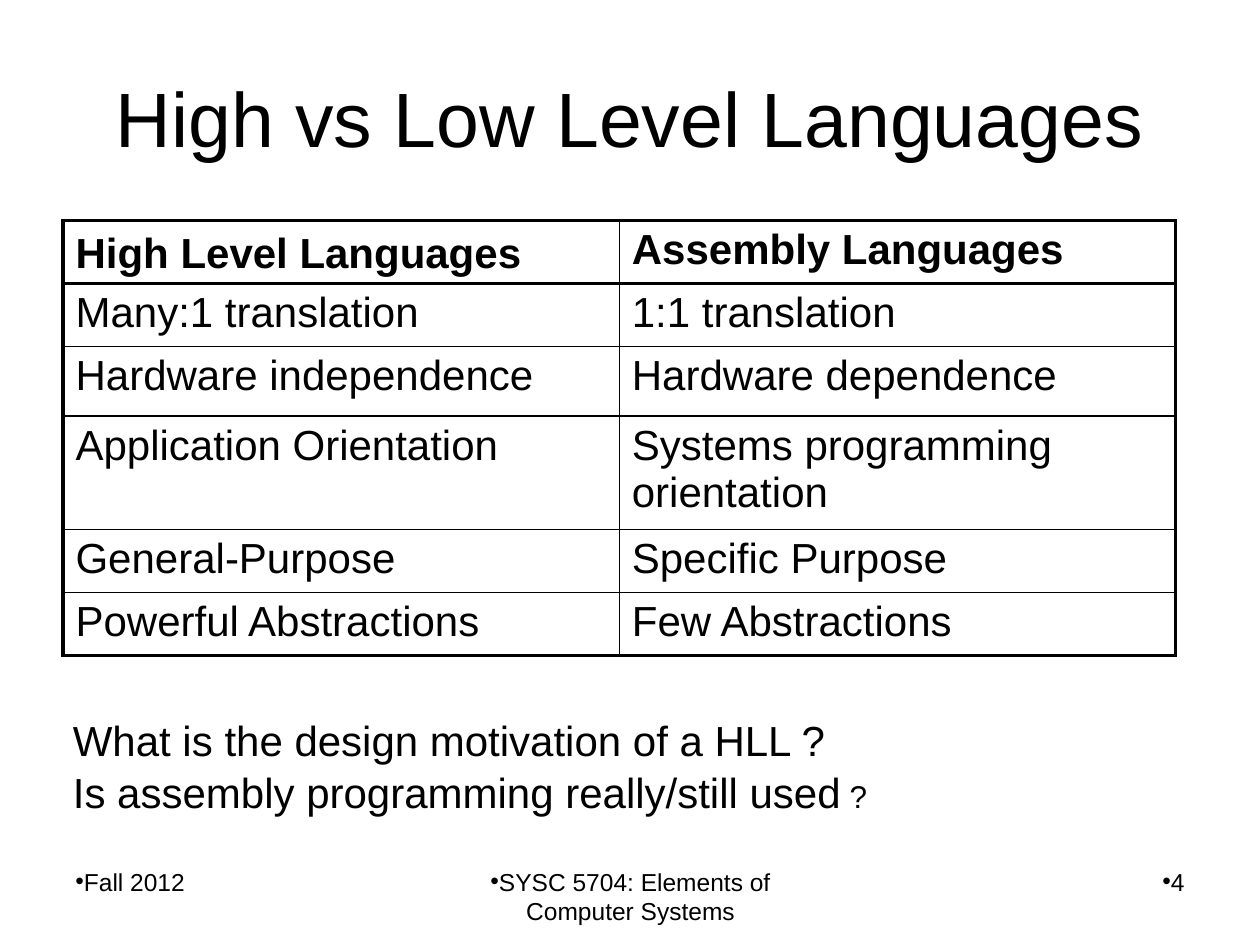
from dataclasses import dataclass

from lxml.etree import SubElement
from pptx import Presentation
from pptx.dml.color import RGBColor
from pptx.enum.shapes import MSO_CONNECTOR
from pptx.enum.text import MSO_ANCHOR, PP_ALIGN
from pptx.oxml.ns import qn
from pptx.util import Inches, Pt


@dataclass(frozen=True)
class Theme:
    font: str = "Arial"
    ink: str = "000000"
    title: int = 44
    body: int = 24
    small: int = 18
    foot: int = 14
    thick: float = 2.25
    thin: float = 1


THEME = Theme()
INK = RGBColor.from_string(THEME.ink)
ROWS = [
    ("High Level Languages", "Assembly Languages"),
    ("Many:1 translation", "1:1 translation"),
    ("Hardware independence", "Hardware dependence"),
    ("Application Orientation", "Systems programming orientation"),
    ("General-Purpose", "Specific Purpose"),
    ("Powerful Abstractions", "Few Abstractions"),
]
HEIGHTS = [0.46, 0.46, 0.55, 0.68, 0.46, 0.46]
FOOTERS = [
    (0.5, 2.33, "Fall 2012", PP_ALIGN.LEFT),
    (3.42, 3.17, "SYSC 5704: Elements of Computer Systems", PP_ALIGN.CENTER),
    (7.17, 2.33, "4", PP_ALIGN.RIGHT),
]
ASKS = [
    [("What is the design motivation of a HLL ?", THEME.body)],
    [("Is assembly programming really/still used", THEME.body),
     (" ?", THEME.small)],
]


def add_run(para, text, size, bold=False):
    run = para.add_run()
    run.text = text
    font = run.font
    font.name, font.size, font.bold = THEME.font, Pt(size), bold
    font.color.rgb = INK


def add_title(slide, text):
    title = slide.shapes.title
    title.left, title.top = Inches(0.5), Inches(0.3)
    title.width, title.height = Inches(9), Inches(1.25)
    frame = title.text_frame
    frame.vertical_anchor = MSO_ANCHOR.MIDDLE
    para = frame.paragraphs[0]
    para.alignment = PP_ALIGN.CENTER
    add_run(para, text, THEME.title)


def add_edge(cell, side, width):
    props = cell._tc.get_or_add_tcPr()
    line = SubElement(props, qn(f"a:ln{side}"), w=str(Pt(width)))
    fill = SubElement(line, qn("a:solidFill"))
    SubElement(fill, qn("a:srgbClr"), val=THEME.ink)


def add_grid(slide):
    """Table with a thick outer frame and thin inner rules."""
    last, end = len(ROWS) - 1, len(ROWS[0]) - 1
    table = slide.shapes.add_table(
        len(ROWS), len(ROWS[0]), Inches(0.5), Inches(1.75),
        Inches(8.83), Inches(sum(HEIGHTS))).table
    table.first_row = table.horz_banding = False
    for row, height in zip(table.rows, HEIGHTS):
        row.height = Inches(height)
    for i, texts in enumerate(ROWS):
        for j, text in enumerate(texts):
            cell = table.cell(i, j)
            outer = {"L": j == 0, "R": j == end, "T": i == 0, "B": i == last}
            for side, thick in outer.items():
                add_edge(cell, side, THEME.thick if thick else THEME.thin)
            cell.fill.background()
            if i == j == 0:
                cell.vertical_anchor = MSO_ANCHOR.BOTTOM
            para = cell.text_frame.paragraphs[0]
            add_run(para, text, THEME.body, bold=i == 0)


def add_rule(slide):
    rule = slide.shapes.add_connector(
        MSO_CONNECTOR.STRAIGHT, Inches(0.5), Inches(2.25),
        Inches(9.33), Inches(2.25))
    rule.line.color.rgb = INK
    rule.line.width = Pt(THEME.thick)
    SubElement(rule._element.spPr, qn("a:effectLst"))


def add_asks(slide):
    box = slide.shapes.add_textbox(
        Inches(0.48), Inches(5.29), Inches(6.51), Inches(1.5))
    frame = box.text_frame
    frame.word_wrap = False
    frame.margin_top = Inches(0.38)
    for i, parts in enumerate(ASKS):
        para = frame.add_paragraph() if i else frame.paragraphs[0]
        para.space_after = Pt(1)
        for text, size in parts:
            add_run(para, text, size)


def add_foot(slide, left, width, text, align):
    box = slide.shapes.add_textbox(
        Inches(left), Inches(6.83), Inches(width), Inches(0.52))
    frame = box.text_frame
    frame.word_wrap = True
    para = frame.paragraphs[0]
    para.alignment = align
    props = para._p.get_or_add_pPr()
    props.set("marL", "0")
    props.set("indent", "0")
    SubElement(props, qn("a:buFont"), typeface=THEME.font)
    SubElement(props, qn("a:buChar"), char="•")
    add_run(para, text, THEME.foot)


def main():
    deck = Presentation()
    deck.slide_width, deck.slide_height = Inches(10), Inches(7.5)
    slide = deck.slides.add_slide(deck.slide_layouts.get_by_name("Title Only"))
    for foot in FOOTERS:
        add_foot(slide, *foot)
    add_title(slide, "High vs Low Level Languages")
    add_grid(slide)
    add_rule(slide)
    add_asks(slide)
    deck.save("out.pptx")


if __name__ == "__main__":
    main()
